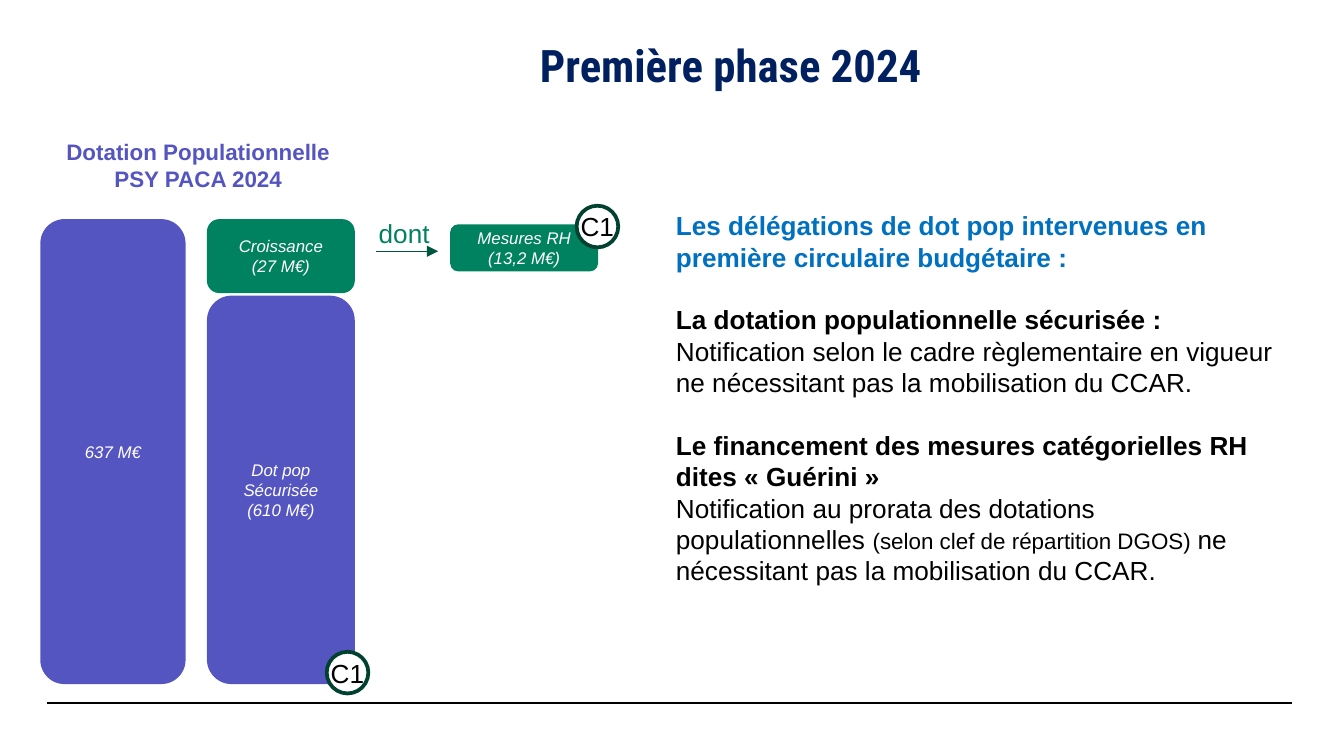
from lxml import etree
from pptx import Presentation
from pptx.dml.color import RGBColor
from pptx.enum.shapes import MSO_CONNECTOR, MSO_SHAPE
from pptx.enum.text import MSO_ANCHOR, PP_ALIGN
from pptx.oxml.ns import qn
from pptx.util import Pt

STRAIGHT = MSO_CONNECTOR.STRAIGHT
ROUNDED, OVAL = MSO_SHAPE.ROUNDED_RECTANGLE, MSO_SHAPE.OVAL
TOP, MIDDLE = MSO_ANCHOR.TOP, MSO_ANCHOR.MIDDLE
LEFT, CENTER = PP_ALIGN.LEFT, PP_ALIGN.CENTER

COLORS = {
    "navy": "002060", "violet": "5555C1", "green": "008260",
    "arrow": "005640", "ring": "004130", "blue": "0070C0",
    "black": "000000", "white": "FFFFFF",
}

TITLE = {"name": "Roboto Condensed", "size": 24, "color": "navy", "bold": True}
HEADING = {"size": 12, "color": "violet", "bold": True}
BOX_TEXT = {"size": 9, "color": "white", "italic": True}
BODY = {"size": 14, "color": "black"}
GREEN_BODY = {**BODY, "color": "green"}
BOLD = {**BODY, "bold": True}
LEAD = {**BOLD, "color": "blue"}
SMALL = {**BODY, "size": 12}


def rgb(name):
    return RGBColor.from_string(COLORS[name])


class SlideBuilder:
    def __init__(self, slide, font_name="Arial"):
        self.slide = slide
        self.font_name = font_name

    def fill_text(self, shape, paragraphs, align, anchor=TOP, inset=(7.2, 3.6),
                  gap=0, gaps_before=(), line_spacing=None, wrap=True):
        """Fill a shape with paragraphs, each a list of (text, format) runs."""
        frame = shape.text_frame
        horizontal, vertical = map(Pt, inset)
        settings = {
            "word_wrap": wrap, "vertical_anchor": anchor,
            "margin_left": horizontal, "margin_right": horizontal,
            "margin_top": vertical, "margin_bottom": vertical,
        }
        for attribute, value in settings.items():
            setattr(frame, attribute, value)
        for index, runs in enumerate(paragraphs):
            paragraph = frame.add_paragraph() if index else frame.paragraphs[0]
            paragraph.alignment = align
            if line_spacing:
                paragraph.line_spacing = line_spacing
            if index in gaps_before:
                paragraph.space_before = Pt(gap)
            for text, style in runs:
                run = paragraph.add_run()
                run.text = text
                self.format_font(run.font, style)

    def format_font(self, font, style):
        values = {"name": self.font_name, "bold": False, "italic": False, **style}
        font.color.rgb = rgb(values.pop("color"))
        values["size"] = Pt(values["size"])
        for attribute, value in values.items():
            setattr(font, attribute, value)

    def text(self, left, top, width, height, paragraphs, align=LEFT, **options):
        box = self.slide.shapes.add_textbox(Pt(left), Pt(top), Pt(width), Pt(height))
        self.fill_text(box, paragraphs, align, **options)

    def shape(self, kind, left, top, width, height, fill):
        shape = self.slide.shapes.add_shape(
            kind, Pt(left), Pt(top), Pt(width), Pt(height))
        shape.shadow.inherit = False
        shape.fill.solid()
        shape.fill.fore_color.rgb = rgb(fill)
        shape.line.fill.background()
        return shape

    def block(self, left, top, width, height, fill, lines):
        shape = self.shape(ROUNDED, left, top, width, height, fill)
        self.fill_text(shape, [[(line, BOX_TEXT)] for line in lines], CENTER, MIDDLE)

    def badge(self, left, top, label, diameter=22.3):
        shape = self.shape(OVAL, left, top, diameter, diameter, "white")
        shape.line.color.rgb = rgb("ring")
        shape.line.width = Pt(2)
        self.fill_text(shape, [[(label, BODY)]], CENTER, MIDDLE, inset=(0, 0),
                       wrap=False)

    def line(self, start, end, y, color, width, arrow=False):
        connector = self.slide.shapes.add_connector(
            STRAIGHT, Pt(start), Pt(y), Pt(end), Pt(y))
        connector.line.color.rgb = rgb(color)
        connector.line.width = Pt(width)
        properties = connector._element.spPr
        if arrow:
            etree.SubElement(properties.find(qn("a:ln")), qn("a:tailEnd"),
                             type="triangle")
        etree.SubElement(properties, qn("a:effectLst"))


def main():
    presentation = Presentation()
    presentation.slide_width, presentation.slide_height = Pt(720), Pt(405)
    slide = presentation.slides.add_slide(presentation.slide_layouts[6])
    builder = SlideBuilder(slide)

    builder.line(25.2, 692, 376.6, "black", 0.8)
    builder.text(88, 10, 607, 62.6, [[("Première phase 2024", TITLE)]], CENTER,
                 inset=(7.2, 7.2), line_spacing=1.1)

    bar_top, bar_bottom, split_left, block_width = 117.4, 366.5, 110.9, 79.2
    secured_top = 158.4
    builder.block(21.6, bar_top, 77.8, bar_bottom - bar_top, "violet", ["637 M€"])
    builder.block(split_left, secured_top, block_width, bar_bottom - secured_top,
                  "violet", ["Dot pop", "Sécurisée", "(610 M€)"])
    builder.block(split_left, bar_top, block_width, 39.6, "green",
                  ["Croissance", "(27 M€)"])
    builder.text(22.3, 74.2, 167.8, 28.8,
                 [[("Dotation Populationnelle PSY PACA 2024", HEADING)]],
                 CENTER, inset=(0, 0))

    builder.line(201.6, 234.7, 134.6, "arrow", 0.75, arrow=True)
    builder.block(241.2, 120.2, block_width, 25.2, "green", ["Mesures RH (13,2 M€)"])
    builder.text(195.8, 113, 43.9, 24.5, [[("dont", GREEN_BODY)]])
    builder.badge(175, 349.2, "C1")
    builder.badge(308.9, 110.2, "C1")

    explanation = [
        [("Les délégations de dot pop intervenues en première circulaire budgétaire :",
          LEAD)],
        [("La dotation populationnelle sécurisée : ", BOLD),
         ("Notification selon le cadre règlementaire en vigueur ne nécessitant pas "
          "la mobilisation du CCAR.", BODY)],
        [("Le financement des mesures catégorielles RH dites « Guérini »", BOLD)],
        [("Notification au prorata des dotations populationnelles ", BODY),
         ("(selon clef de répartition DGOS) ", SMALL),
         ("ne nécessitant pas la mobilisation du CCAR.", BODY)],
    ]
    builder.text(355, 105.1, 339.1, 234.7, explanation, inset=(7.2, 7.2),
                 gap=16.8, gaps_before=(1, 2))

    presentation.save("out.pptx")


if __name__ == "__main__":
    main()
